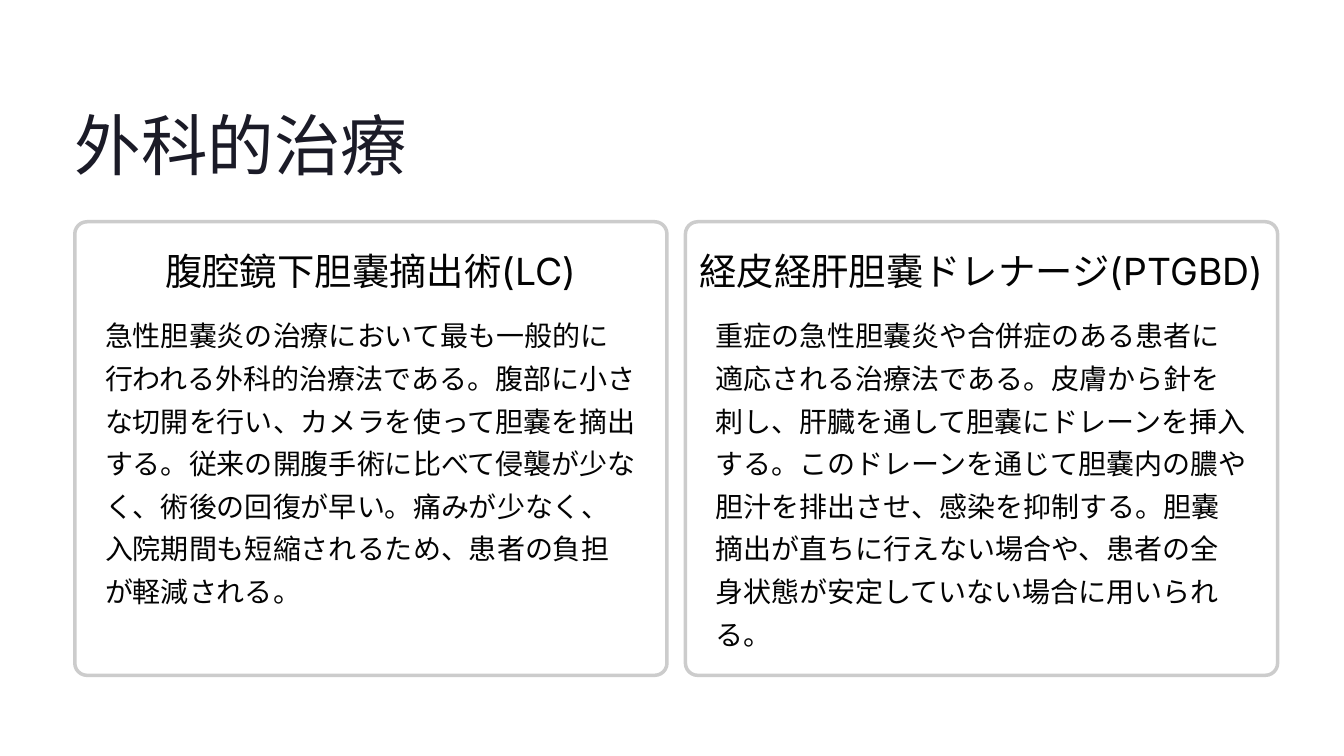
from dataclasses import dataclass

from lxml import etree
from pptx import Presentation
from pptx.dml.color import RGBColor
from pptx.enum import shapes, text
from pptx.oxml import ns
from pptx.util import Inches, Pt


@dataclass(frozen=True)
class Style:
    font: str
    size: float
    lead: float
    color: str


@dataclass(frozen=True)
class Theme:
    title: Style = Style("Inter", 57, 71.5, "1B1B27")
    head: Style = Style("Inter", 32, 35.5, "030303")
    body: Style = Style("Karla", 24, 36.5, "030303")
    fill: str = "FFFFFF"
    edge: str = "CCCCCC"


@dataclass(frozen=True)
class Box:
    left: float
    top: float
    width: float
    height: float


@dataclass(frozen=True)
class Card:
    head: str
    body: str


THEME = Theme()
LEFT, TOP, WIDTH, HEIGHT, STEP = 0.89, 2.64, 7.05, 5.4, 7.27
PAD = 0.36
CARDS = [
    Card(
        "腹腔鏡下胆嚢摘出術(LC)",
        "急性胆嚢炎の治療において最も一般的に行われる外科的治療法である。"
        "腹部に小さな切開を行い、カメラを使って胆嚢を摘出する。"
        "従来の開腹手術に比べて侵襲が少なく、術後の回復が早い。"
        "痛みが少なく、入院期間も短縮されるため、患者の負担が軽減される。",
    ),
    Card(
        "経皮経肝胆嚢ドレナージ(PTGBD)",
        "重症の急性胆嚢炎や合併症のある患者に適応される治療法である。"
        "皮膚から針を刺し、肝臓を通して胆嚢にドレーンを挿入する。"
        "このドレーンを通じて胆嚢内の膿や胆汁を排出させ、感染を抑制する。"
        "胆嚢摘出が直ちに行えない場合や、患者の全身状態が安定していない場合に用いられる。",
    ),
]


def place(shape, box: Box) -> None:
    shape.left, shape.top = Inches(box.left), Inches(box.top)
    shape.width, shape.height = Inches(box.width), Inches(box.height)


def write(holder, box: Box, words: str, style: Style,
          align=text.PP_ALIGN.LEFT, wrap: bool = False) -> None:
    """Fill a placeholder with one plain, unbulleted paragraph."""
    place(holder, box)
    frame = holder.text_frame
    frame.margin_left = frame.margin_right = 0
    frame.margin_top = frame.margin_bottom = 0
    frame.auto_size = text.MSO_AUTO_SIZE.NONE
    frame.vertical_anchor = text.MSO_ANCHOR.TOP
    frame.word_wrap = wrap
    para = frame.paragraphs[0]
    para.alignment = align
    para.line_spacing = Pt(style.lead)
    para.space_before = para.space_after = Pt(0)
    props = para._p.get_or_add_pPr()
    props.set("marL", "0")
    props.set("indent", "0")
    etree.SubElement(props, ns.qn("a:buNone"))
    run = para.add_run()
    run.text = words
    run.font.name = style.font
    run.font.size = Pt(style.size)
    run.font.bold = False
    run.font.color.rgb = RGBColor.from_string(style.color)


def panel(slide, box: Box) -> None:
    """Draw a rounded card behind the text."""
    shape = slide.shapes.add_shape(
        shapes.MSO_SHAPE.ROUNDED_RECTANGLE, 0, 0, 0, 0)
    place(shape, box)
    shape.adjustments[0] = 0.027
    shape.shadow.inherit = False
    shape.fill.solid()
    shape.fill.fore_color.rgb = RGBColor.from_string(THEME.fill)
    color = shape._element.spPr.find(ns.qn("a:solidFill"))[0]
    etree.SubElement(color, ns.qn("a:alpha"), val="95000")
    shape.line.color.rgb = RGBColor.from_string(THEME.edge)
    shape.line.width = Pt(3)
    slide.shapes._spTree.insert(2, shape._element)


def main() -> None:
    deck = Presentation()
    deck.slide_width, deck.slide_height = Inches(16), Inches(9)
    slide = deck.slides.add_slide(deck.slide_layouts.get_by_name("Comparison"))
    title, *slots = slide.placeholders
    write(title, Box(LEFT, 1.19, 7.98, 1), "外科的治療", THEME.title)
    for i, card in enumerate(CARDS):
        left = LEFT + i * STEP
        head, body = slots[2 * i:2 * i + 2]
        panel(slide, Box(left, TOP, WIDTH, HEIGHT))
        write(head, Box(left, TOP + PAD, WIDTH, 0.54), card.head,
              THEME.head, text.PP_ALIGN.CENTER)
        write(body, Box(left + PAD, 3.69, 6.32, 3.87), card.body,
              THEME.body, wrap=True)
    deck.save("out.pptx")


if __name__ == "__main__":
    main()
